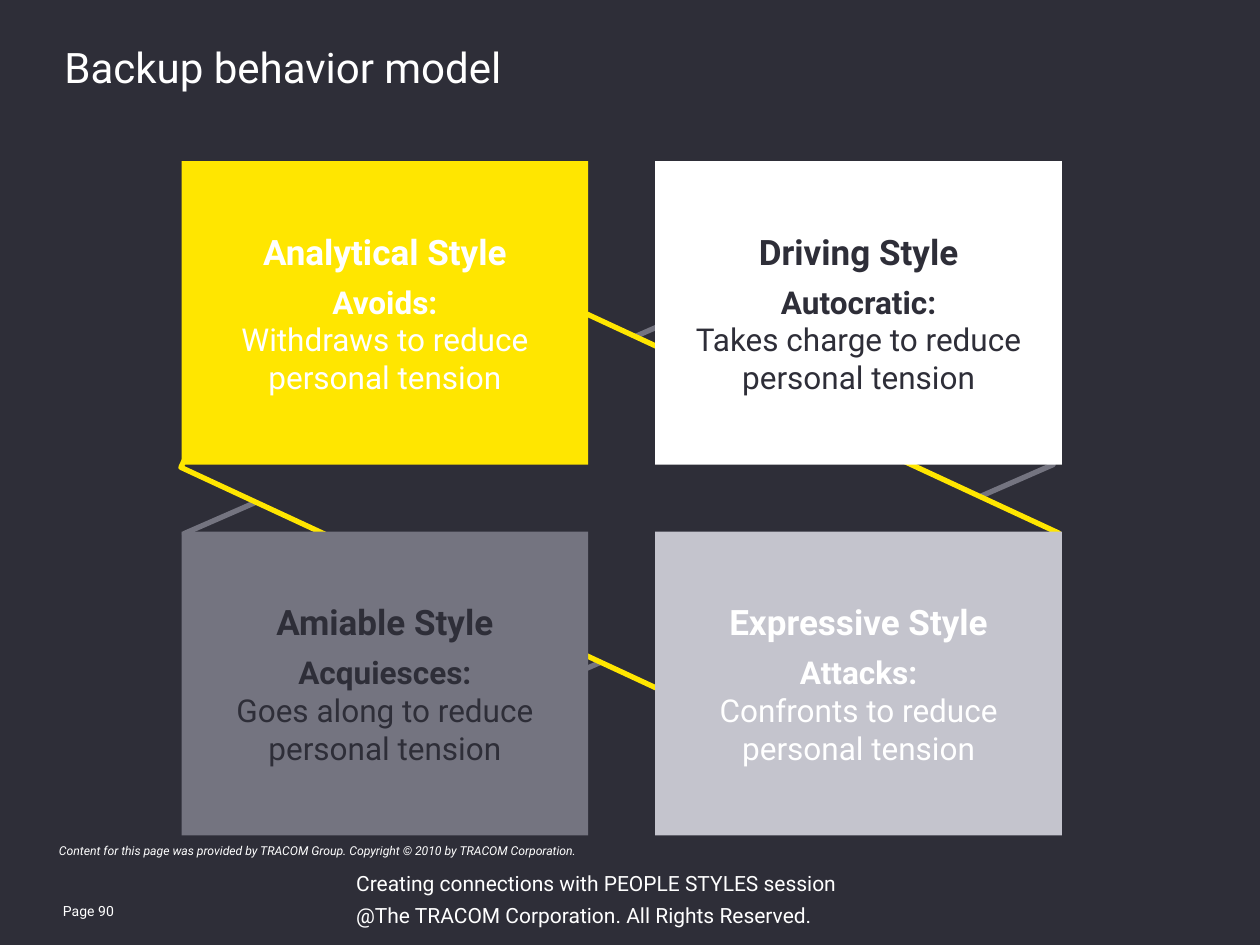
from pptx import Presentation
from pptx.dml.color import RGBColor
from pptx.enum.shapes import MSO_SHAPE
from pptx.enum.text import MSO_ANCHOR, MSO_AUTO_SIZE, PP_ALIGN
from pptx.util import Cm, Pt

FONT = "Roboto"
COLORS = {
    "dark": "2E2E38",
    "yellow": "FFE600",
    "white": "FFFFFF",
    "gray": "747480",
    "silver": "C4C4CD",
}
CARD_LEFT, CARD_TOP = 3.66, 3.25
CARD_WIDTH, CARD_HEIGHT = 8.2, 6.12
COLUMN_STEP, ROW_STEP = 9.55, 7.47
CARDS = [
    ("Analytical Style", "Avoids:", "Withdraws to reduce personal tension", "yellow", "white"),
    ("Driving Style", "Autocratic:", "Takes charge to reduce personal tension", "white", "dark"),
    ("Amiable Style", "Acquiesces:", "Goes along to reduce personal tension", "gray", "dark"),
    ("Expressive Style", "Attacks:", "Confronts to reduce personal tension", "silver", "white"),
]


def color(name):
    return RGBColor.from_string(COLORS[name])


def add_span(para, text, size, color_name="white", bold=False, italic=False):
    span = para.add_run()
    span.text = text
    span.font.name = FONT
    span.font.size = Pt(size)
    span.font.bold = bold
    span.font.italic = italic
    span.font.color.rgb = color(color_name)


def next_para(frame, index):
    return frame.add_paragraph() if index else frame.paragraphs[0]


def clear_margins(frame):
    frame.margin_left = frame.margin_right = 0
    frame.margin_top = frame.margin_bottom = 0


def format_title(slide, text):
    title = slide.shapes.title
    title.left, title.top, title.width, title.height = Cm(1.3), Cm(0.99), Cm(21.31), Cm(2.26)
    frame = title.text_frame
    frame.auto_size = MSO_AUTO_SIZE.NONE
    frame.vertical_anchor = MSO_ANCHOR.TOP
    clear_margins(frame)
    para = frame.paragraphs[0]
    para.alignment = PP_ALIGN.LEFT
    para.line_spacing = 0.85
    para.space_before = Pt(0)
    add_span(para, text, 24)


def add_rectangle(slide, left, top, width, height, fill):
    box = slide.shapes.add_shape(
        MSO_SHAPE.RECTANGLE, Cm(left), Cm(top), Cm(width), Cm(height)
    )
    box.shadow.inherit = False
    box.fill.solid()
    box.fill.fore_color.rgb = color(fill)
    box.line.fill.background()
    return box


def add_tilted_frame(slide, left, top, width, height, rotation, line):
    box = add_rectangle(slide, left, top, width, height, "dark")
    box.rotation = rotation
    box.line.color.rgb = color(line)
    box.line.width = Pt(3)


def add_card(slide, index, style, behavior, description, fill, ink):
    row, column = divmod(index, 2)
    box = add_rectangle(
        slide,
        CARD_LEFT + column * COLUMN_STEP,
        CARD_TOP + row * ROW_STEP,
        CARD_WIDTH,
        CARD_HEIGHT,
        fill,
    )
    frame = box.text_frame
    frame.word_wrap = True
    frame.vertical_anchor = MSO_ANCHOR.MIDDLE
    lines = [(style, 20, True, 6), (behavior, 18, True, 0), (description, 18, False, 0)]
    for number, (text, size, bold, after) in enumerate(lines):
        para = next_para(frame, number)
        para.alignment = PP_ALIGN.CENTER
        para.space_after = Pt(after)
        add_span(para, text, size, ink, bold)


def add_text(slide, left, top, width, height, lines, size,
             italic=False, margins=True, spacing=1.0, after=0):
    box = slide.shapes.add_textbox(Cm(left), Cm(top), Cm(width), Cm(height))
    frame = box.text_frame
    frame.word_wrap = True
    if not margins:
        clear_margins(frame)
    for number, text in enumerate(lines):
        para = next_para(frame, number)
        para.line_spacing = spacing
        para.space_after = Pt(after)
        add_span(para, text, size, italic=italic)


def main():
    deck = Presentation()
    deck.slide_width, deck.slide_height = Cm(25.4), Cm(19.05)
    page = deck.slides.add_slide(deck.slide_layouts[5])
    page.background.fill.solid()
    page.background.fill.fore_color.rgb = color("dark")

    format_title(page, "Backup behavior model")
    add_text(page, 1.02, 18.06, 1.85, 0.51, ["Page 90"], 8)
    add_tilted_frame(page, 4.17, 7.19, 16.61, 5.74, 336.4, "gray")
    add_tilted_frame(page, 4.19, 6.96, 16.61, 6.25, 24.9, "yellow")
    add_text(
        page, 1.19, 16.99, 22.86, 0.3,
        ["Content for this page was provided by TRACOM Group. "
         "Copyright © 2010 by TRACOM Corporation."],
        7, italic=True, margins=False,
    )
    for index, card in enumerate(CARDS):
        add_card(page, index, *card)
    add_text(
        page, 6.93, 17.5, 12.7, 1.35,
        ["Creating connections with PEOPLE STYLES session",
         "@The TRACOM Corporation. All Rights Reserved."],
        12, spacing=0.85, after=6,
    )
    deck.save("out.pptx")


if __name__ == "__main__":
    main()
